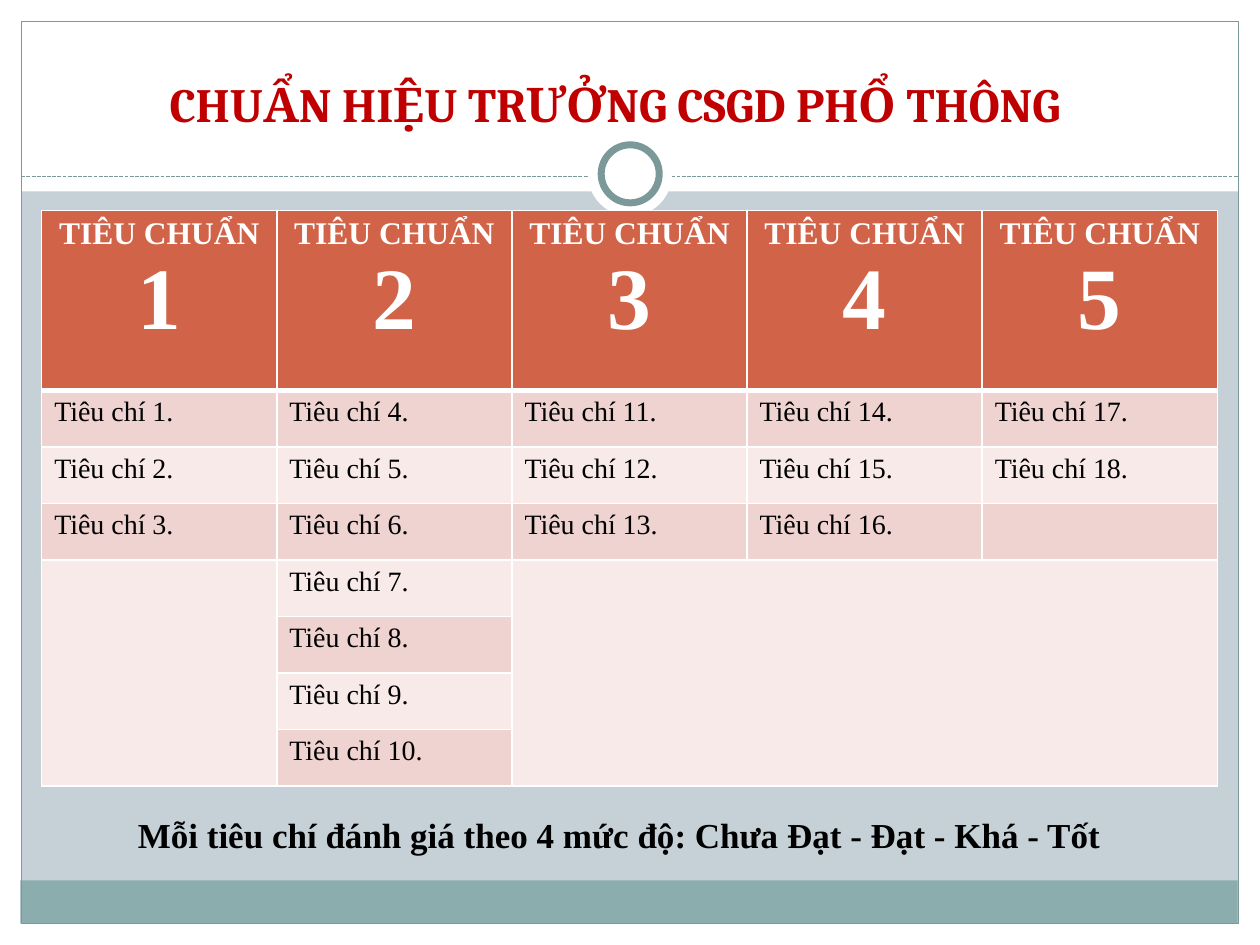
from lxml import etree
from pptx import Presentation
from pptx.dml.color import RGBColor
from pptx.enum.dml import MSO_LINE
from pptx.enum.shapes import MSO_CONNECTOR, MSO_SHAPE
from pptx.enum.text import MSO_ANCHOR, MSO_AUTO_SIZE, PP_ALIGN
from pptx.oxml import parse_xml
from pptx.oxml.ns import nsdecls, qn
from pptx.util import Cm, Pt

WHITE = RGBColor(0xFF, 0xFF, 0xFF)
BLACK = RGBColor(0x00, 0x00, 0x00)
RED = RGBColor(0xC0, 0x00, 0x00)
BACKDROP = RGBColor(0xC5, 0xD1, 0xD7)
TEAL = RGBColor(0x8C, 0xAD, 0xAE)
SLATE = RGBColor(0x7C, 0x99, 0x9A)
ORANGE = RGBColor(0xD1, 0x63, 0x49)
BANDS = (RGBColor(0xEE, 0xD3, 0xD0), RGBColor(0xF7, 0xEA, 0xE9))

BODY_FONT = "Times New Roman"
TITLE_FONT = "Cambria"
CRITERIA = ((1, 3), (4, 10), (11, 13), (14, 16), (17, 18))


class SlideBuilder:
    """Holds the current slide and draws each kind of element on it."""

    def __init__(self, prs):
        self.s = prs.slides.add_slide(prs.slide_layouts[5])
        self.s.background.fill.solid()
        self.s.background.fill.fore_color.rgb = BACKDROP

    def style(self, r, size, color, bold=False, font=BODY_FONT):
        r.font.name = font
        r.font.size = Pt(size)
        r.font.bold = bold
        r.font.color.rgb = color

    def shape(self, kind, box, fill=None, line=None, width=0.75):
        sp = self.s.shapes.add_shape(kind, *map(Cm, box))
        sp.shadow.inherit = False
        if fill is None:
            sp.fill.background()
        else:
            sp.fill.solid()
            sp.fill.fore_color.rgb = fill
        if line is None:
            sp.line.fill.background()
        else:
            sp.line.color.rgb = line
            sp.line.width = Pt(width)

    def dashed_rule(self, x1, x2, y):
        c = self.s.shapes.add_connector(MSO_CONNECTOR.STRAIGHT, Cm(x1), Cm(y), Cm(x2), Cm(y))
        c.line.color.rgb = SLATE
        c.line.width = Pt(0.75)
        c.line.dash_style = MSO_LINE.SQUARE_DOT
        etree.SubElement(c.element.spPr, qn("a:effectLst"))

    def title(self, text, box):
        sp = self.s.shapes.title
        sp.left, sp.top, sp.width, sp.height = map(Cm, box)
        sp.element.getparent().append(sp.element)
        tf = sp.text_frame
        tf.text = text
        tf.auto_size = MSO_AUTO_SIZE.NONE
        tf.vertical_anchor = MSO_ANCHOR.BOTTOM
        p = tf.paragraphs[0]
        p.alignment = PP_ALIGN.CENTER
        self.style(p.runs[0], 27.3, RED, True, TITLE_FONT)

    def note(self, text, box):
        tf = self.s.shapes.add_textbox(*map(Cm, box)).text_frame
        tf.word_wrap = True
        tf.auto_size = MSO_AUTO_SIZE.SHAPE_TO_FIT_TEXT
        tf.text = text
        p = tf.paragraphs[0]
        p.alignment = PP_ALIGN.CENTER
        self.style(p.runs[0], 20, BLACK, True)

    def cell(self, cell, fill, top=1, bottom=1):
        tc_pr = cell._tc.get_or_add_tcPr()
        for i, (side, width) in enumerate(zip("LRTB", (1, 1, top, bottom))):
            tc_pr.insert(i, parse_xml(
                f'<a:ln{side} {nsdecls("a")} w="{Pt(width)}"><a:solidFill>'
                f'<a:srgbClr val="{WHITE}"/></a:solidFill></a:ln{side}>'))
        cell.fill.solid()
        cell.fill.fore_color.rgb = fill

    def criteria_table(self, left, top, col_width, head_height, row_height):
        rows = 1 + max(last - first + 1 for first, last in CRITERIA)
        cols = len(CRITERIA)
        table = self.s.shapes.add_table(
            rows, cols, Cm(left), Cm(top), Cm(col_width * cols),
            Cm(head_height + row_height * (rows - 1))).table
        for i, row in enumerate(table.rows):
            row.height = Cm(row_height if i else head_height)
        for j, (first, last) in enumerate(CRITERIA):
            table.columns[j].width = Cm(col_width)
            head = table.cell(0, j)
            self.cell(head, ORANGE, bottom=3)
            p = head.text_frame.paragraphs[0]
            p.alignment = PP_ALIGN.CENTER
            for text, size in (("TIÊU CHUẨN ", 18), (str(j + 1), 50)):
                r = p.add_run()
                r.text = text
                self.style(r, size, WHITE, True)
            for i in range(1, rows):
                cell = table.cell(i, j)
                self.cell(cell, BANDS[(i - 1) % 2], top=3 if i == 1 else 1)
                number = first + i - 1
                if number <= last:
                    cell.text_frame.text = f"Tiêu chí {number}."
                    self.style(cell.text_frame.paragraphs[0].runs[0], 16, BLACK)
        for start, end in ((0, 0), (2, cols - 1)):
            table.cell(4, start).merge(table.cell(rows - 1, end))


def main():
    prs = Presentation()
    prs.slide_width, prs.slide_height = Cm(25.4), Cm(19.05)
    b = SlideBuilder(prs)
    rect, oval = MSO_SHAPE.RECTANGLE, MSO_SHAPE.OVAL
    for margin in ((0, 18.62, 25.4, 0.43), (0, 0, 25.4, 3.86),
                   (0, 0, 0.43, 19.05), (24.97, 0, 0.43, 19.05)):
        b.shape(rect, margin, WHITE)
    b.shape(rect, (0.41, 17.75, 24.54, 0.87), TEAL)
    b.shape(rect, (0.43, 0.43, 24.54, 18.19), line=SLATE)
    b.dashed_rule(0.43, 24.97, 3.56)
    b.shape(oval, (11.85, 2.66, 1.7, 1.7), WHITE)
    b.shape(oval, (12.12, 2.92, 1.17, 1.17), WHITE, SLATE, 4)
    b.criteria_table(0.84, 4.24, 4.74, 3.63, 1.14)
    b.note("Mỗi tiêu chí đánh giá theo 4 mức độ: Chưa Đạt - Đạt - Khá - Tốt ",
           (0.61, 16.28, 23.93, 1.12))
    b.title("CHUẨN HIỆU TRƯỞNG CSGD PHỔ THÔNG", (1.07, 0.84, 22.66, 1.96))
    prs.save("out.pptx")


if __name__ == "__main__":
    main()
